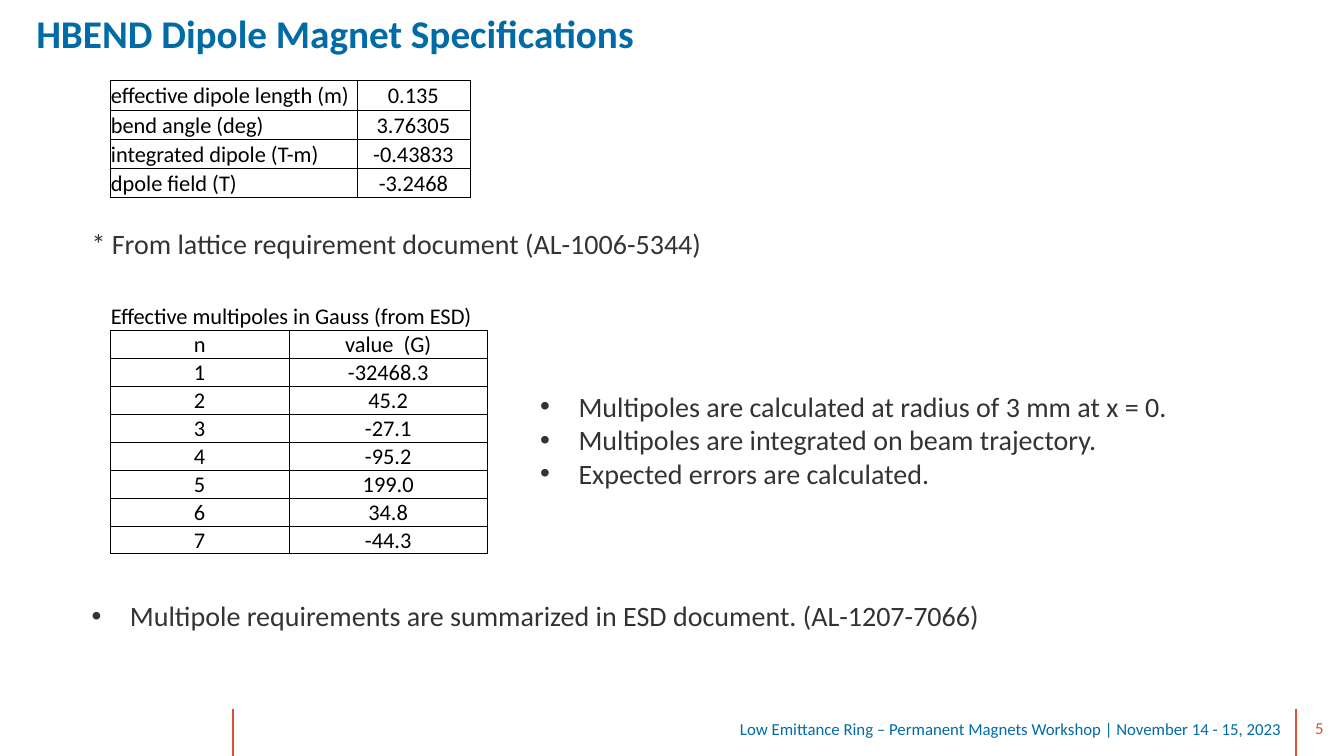
from lxml import etree
from pptx import Presentation
from pptx import util as u
from pptx.dml.color import RGBColor
from pptx.enum import shapes, text
from pptx.oxml import ns

BLUE, RED, GREY, BLACK = "006BA6", "E04E38", "313335", "000000"
LEFT, CENTER, RIGHT = text.PP_ALIGN.LEFT, text.PP_ALIGN.CENTER, text.PP_ALIGN.RIGHT
TOP, MIDDLE, BOTTOM = text.MSO_ANCHOR.TOP, text.MSO_ANCHOR.MIDDLE, text.MSO_ANCHOR.BOTTOM


def colour(value):
    return RGBColor.from_string(value)


def child(parent, tag, **attributes):
    return etree.SubElement(parent, ns.qn(tag), **attributes)


def write(para, words, size=20, color=GREY, bold=False, align=LEFT, bullet=False):
    para.alignment = align
    if bullet:
        props = para._p.get_or_add_pPr()
        indent = u.Inches(0.38)
        props.set("marL", str(indent))
        props.set("indent", str(-indent))
        child(props, "a:buFont", typeface="Arial")
        child(props, "a:buChar", char="•")
    span = para.add_run()
    span.text = words
    span.font.name = "Calibri"
    span.font.size = u.Pt(size)
    span.font.bold = bold
    span.font.color.rgb = colour(color)


def set_borders(cell, visible):
    props = cell._tc.get_or_add_tcPr()
    for index, side in enumerate("LRTB"):
        line = etree.Element(ns.qn(f"a:ln{side}"), w=str(u.Pt(0.5)))
        if side in visible:
            child(child(line, "a:solidFill"), "a:srgbClr", val=BLACK)
        else:
            child(line, "a:noFill")
        props.insert(index, line)


class SlideBuilder:
    def __init__(self, deck):
        self.page = deck.slides.add_slide(deck.slide_layouts[5])

    def place(self, box, area):
        box.left, box.top, box.width, box.height = map(u.Inches, area)

    def title(self, words, area):
        box = self.page.shapes.title
        self.place(box, area)
        frame = box.text_frame
        frame.vertical_anchor = TOP
        frame.auto_size = text.MSO_AUTO_SIZE.NONE
        para = frame.paragraphs[0]
        para.line_spacing = 0.9
        write(para, words, size=28, color=BLUE, bold=True)

    def text(self, lines, area, anchor=TOP, wrap=True, top=0.05, bottom=0.05, **style):
        frame = self.page.shapes.add_textbox(*map(u.Inches, area)).text_frame
        frame.word_wrap = wrap
        frame.vertical_anchor = anchor
        frame.margin_top, frame.margin_bottom = u.Inches(top), u.Inches(bottom)
        for index, words in enumerate(lines):
            para = frame.add_paragraph() if index else frame.paragraphs[0]
            write(para, words, **style)

    def rule(self, x):
        line = self.page.shapes.add_connector(
            shapes.MSO_CONNECTOR.STRAIGHT, u.Inches(x), u.Inches(7.03), u.Inches(x), u.Inches(7.5))
        line.line.color.rgb = colour(RED)
        line.line.width = u.Pt(1.5)
        child(line._element.spPr, "a:effectLst")

    def table(self, rows, area, widths, heights, aligns, heading=None):
        entries = ([(heading, "")] if heading else []) + rows
        table = self.page.shapes.add_table(
            len(entries), len(widths), *map(u.Inches, area)).table
        table.first_row = table.horz_banding = False
        for column, width in zip(table.columns, widths):
            column.width = u.Inches(width)
        for row, height in zip(table.rows, heights):
            row.height = u.Inches(height)
        for r, entry in enumerate(entries):
            is_heading = bool(heading) and r == 0
            for c, words in enumerate(entry):
                cell = table.cell(r, c)
                cell.fill.background()
                cell.vertical_anchor = BOTTOM
                cell.margin_left = cell.margin_right = cell.margin_top = u.Inches(0.01)
                cell.margin_bottom = 0
                set_borders(cell, "B" if is_heading else "LRTB")
                if words:
                    write(cell.text_frame.paragraphs[0], words, size=16, color=BLACK,
                          align=LEFT if is_heading else aligns[c])
        if heading:
            table.cell(0, 0).merge(table.cell(0, len(widths) - 1))


def main():
    deck = Presentation()
    deck.slide_width, deck.slide_height = u.Inches(13.33), u.Inches(7.5)
    slide = SlideBuilder(deck)

    for x in (12.85, 2.31):
        slide.rule(x)
    slide.title("HBEND Dipole Magnet Specifications", (0.26, 0.09, 9, 0.54))

    dipole = [("effective dipole length (m)", "0.135"), ("bend angle (deg)", "3.76305"),
              ("integrated dipole (T-m)", "-0.43833"), ("dpole field (T)", "-3.2468")]
    slide.table(dipole, (1.09, 0.8, 3.57, 1.16), (2.45, 1.12), [0.29] * 4, (LEFT, CENTER))
    slide.text(["* From lattice requirement document (AL-1006-5344)"], (0.81, 2.2, 6.26, 0.44))

    values = ("-32468.3", "45.2", "-27.1", "-95.2", "199.0", "34.8", "-44.3")
    multipoles = [("n", "value  (G)")] + [(str(n), value) for n, value in enumerate(values, 1)]
    slide.table(multipoles, (1.09, 2.99, 3.74, 2.5), (1.78, 1.96), [0.29] + [0.27] * 8,
                (CENTER, CENTER), heading="Effective multipoles in Gauss (from ESD)")
    slide.text(["Multipoles are calculated at radius of 3 mm at x = 0.",
                "Multipoles are integrated on beam trajectory.",
                "Expected errors are calculated."], (5.26, 3.81, 7.66, 1.11), bullet=True)
    slide.text(["Multipole requirements are summarized in ESD document. (AL-1207-7066)"],
               (0.81, 5.89, 9.64, 0.44), bullet=True)

    slide.text(["Low Emittance Ring – Permanent Magnets Workshop | November 14 - 15, 2023"],
               (7.17, 7.03, 5.64, 0.4), anchor=MIDDLE, wrap=False, top=0.1, bottom=0.1,
               size=12, color=BLUE, align=RIGHT)
    slide.text(["5"], (12.79, 7.05, 0.59, 0.4), anchor=MIDDLE, bottom=0.1,
               size=12, color=RED, align=CENTER)
    deck.save("out.pptx")


if __name__ == "__main__":
    main()
